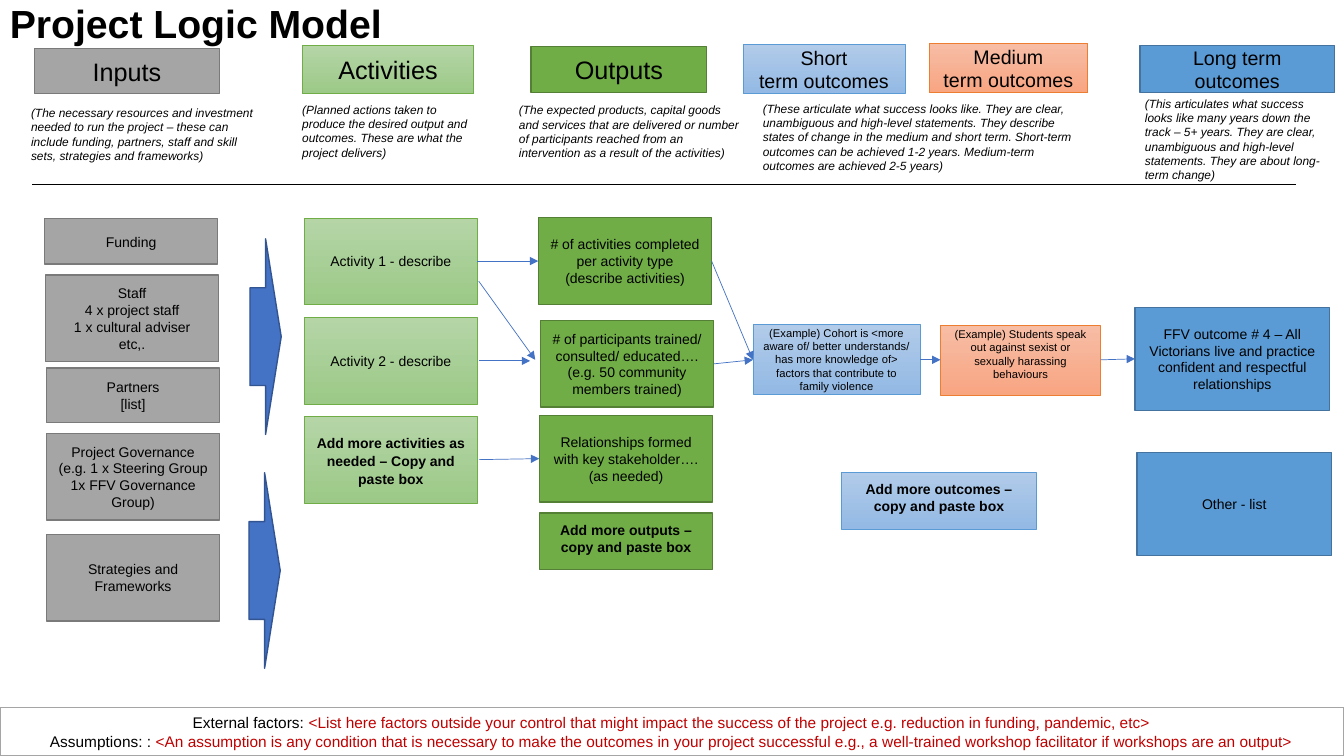
import pptx
import pptx.util
import pptx.dml.color
import pptx.enum.shapes
import pptx.enum.text
import pptx.oxml
import pptx.oxml.ns

COLUMNS, ROWS = 160, 90
SLIDE_WIDTH, SLIDE_HEIGHT = pptx.util.Inches(13.333), pptx.util.Inches(7.5)
COLORS = {
    "text": "000000", "hint": "C00000", "arrow": "4472C4", "arrow edge": "325491",
    "paper": "FFFFFF", "frame": "A5A5A5",
}
STYLES = {
    "input": (["A5A5A5"], "7A7A7A", 1),
    "activity": (["B5D5A7", "9CC987"], "70AD47", 0.5),
    "output": (["70AD47"], "538035", 1),
    "short": (["B1CBE9", "93B9E4"], "5B9BD5", 0.5),
    "medium": (["F7BDA5", "F8A582"], "ED7D31", 0.5),
    "long": (["5B9BD5"], "43739E", 1),
    "flow": ([COLORS["arrow"]], COLORS["arrow edge"], 1),
    "footer": ([COLORS["paper"]], COLORS["frame"], 1),
}
HEADINGS = [
    ("input", (4.08, 5.76, 22.08, 5.4), 18, ["Inputs"]),
    ("activity", (36, 5.4, 20.4, 5.76), 18, ["Activities"]),
    ("output", (63.24, 5.52, 20.88, 5.52), 18, ["Outputs"]),
    ("short", (88.44, 5.28, 19.32, 5.88), 14, ["Short", "term outcomes"]),
    ("medium", (110.64, 5.16, 18.84, 5.88), 14, ["Medium", "term outcomes"]),
    ("long", (135.72, 5.4, 23.16, 5.64), 14, ["Long term outcomes"]),
]
EXPLANATIONS = [
    ((2.52, 12.84, 29.16, 6.24), "(The necessary resources and investment needed to run the project – these can include funding, partners, staff and skill sets, strategies and frameworks)"),
    ((34.8, 11.4, 22.56, 8.4), "(Planned actions taken to produce the desired output and outcomes. These are what the project delivers)"),
    ((60.6, 10.56, 29.16, 10.2), "(The expected products, capital goods and services that are delivered or number of participants reached from an intervention as a result of the activities)"),
    ((89.64, 11.4, 40.44, 9.84), "(These articulate what success looks like. They are clear, unambiguous and high-level statements. They describe states of change in the medium and short term. Short-term outcomes can be achieved 1-2 years. Medium-term outcomes are achieved 2-5 years)"),
    ((135.12, 11.64, 23.64, 9.84), "(This articulates what success looks like many years down the track – 5+ years. They are clear, unambiguous and high-level statements. They are about long-term change)"),
]
BOX_WIDTH, BOX_HEIGHT = 20.64, 10.32
INPUTS = [
    (5.28, 26.04, 5.4, ["Funding"]),
    (5.4, 32.76, BOX_HEIGHT, ["Staff", "4 x project staff", "1 x cultural adviser", "etc,."]),
    (5.52, 43.8, 6.48, ["Partners", "[list]"]),
    (5.52, 51.6, BOX_HEIGHT, ["Project Governance", "(e.g. 1 x Steering Group", "1x FFV Governance Group)"]),
    (5.52, 63.6, BOX_HEIGHT, ["Strategies and Frameworks"]),
]
ACTIVITY_TOP, ACTIVITY_PITCH = 25.95, 11.82
ACTIVITIES = [
    (["Activity 1 - describe"], {}, 1),
    (["Activity 2 - describe"], {}, 1),
    (["Add more activities as needed – Copy and paste box"], {"bold": True}, 1.07),
]
OUTPUTS = [
    (64.08, 25.92, ["# of activities completed per activity type (describe activities)"]),
    (64.32, 38.16, ["# of participants trained/ consulted/ educated….", "(e.g. 50 community members trained)"]),
    (64.2, 49.44, ["Relationships formed with key stakeholder…. (as needed)"]),
]
OUTCOMES = [
    ("short", (89.64, 38.64, 19.92, 8.28), 8, "(Example) Cohort is <more aware of/ better understands/ has more knowledge of> factors that contribute to family violence", 0),
    ("medium", (111.96, 38.76, 19.08, 8.28), 8, "(Example) Students speak out against sexist or sexually harassing behaviours", 9.2),
    ("long", (135.12, 36.6, 23.16, 12.24), 10, "FFV outcome # 4 – All Victorians live and practice confident and respectful relationships", 0),
    ("long", (135.36, 53.88, 23.16, 12.24), 10, "Other - list", 0),
]
ADD_MORE = [
    ("short", (100.2, 56.28, 23.16, 6.72), "Add more outcomes – copy and paste box"),
    ("output", (64.2, 61.08, BOX_WIDTH, 6.72), "Add more outputs – copy and paste box"),
]
FLOW_ARROWS = [(29.76, 28.44, 3.72, 23.28), (29.64, 56.28, 3.72, 23.28)]
LINKS = [
    (56.8, 31.08, 64.08, 31.08), (57, 33.48, 63.72, 42.84),
    (57, 54.72, 64.2, 54.6), (57, 42.96, 63.12, 42.96),
    (84.72, 31.08, 89.64, 42.84), (84.96, 43.32, 89.64, 42.84),
    (109.56, 42.84, 111.96, 42.84), (131.04, 42.84, 135.12, 42.72),
]
FOOTER = [
    [("External factors: ", "text"),
     ("<List here factors outside your control that might impact the success of the project e.g. reduction in funding, pandemic, etc>", "hint")],
    [("Assumptions: : ", "text"),
     ("<An assumption is any condition that is necessary to make the outcomes in your project successful e.g., a well-trained workshop facilitator if workshops are an output>", "hint")],
]
CENTER = pptx.enum.text.PP_ALIGN.CENTER
LEFT = pptx.enum.text.PP_ALIGN.LEFT
MIDDLE = pptx.enum.text.MSO_ANCHOR.MIDDLE
TOP = pptx.enum.text.MSO_ANCHOR.TOP


def color(value):
    return pptx.dml.color.RGBColor.from_string(value)


def grid(*lengths):
    units = (SLIDE_WIDTH / COLUMNS, SLIDE_HEIGHT / ROWS)
    return [round(length * units[index % 2]) for index, length in enumerate(lengths)]


def write_text(shape, paragraphs, size, formats=None, align=CENTER, anchor=MIDDLE,
               line_spacing=1, lift=0):
    frame = shape.text_frame
    frame.word_wrap = True
    frame.vertical_anchor = anchor
    frame.margin_bottom = pptx.util.Pt(3.6 + lift)
    font_values = {"name": "Arial", "size": pptx.util.Pt(size), **(formats or {})}
    for index, content in enumerate(paragraphs):
        paragraph = frame.paragraphs[0] if index == 0 else frame.add_paragraph()
        paragraph.alignment = align
        paragraph.line_spacing = line_spacing
        pieces = [(content, "text")] if isinstance(content, str) else content
        for text, color_name in pieces:
            run = paragraph.add_run()
            run.text = text
            for name, value in font_values.items():
                setattr(run.font, name, value)
            run.font.color.rgb = color(COLORS[color_name])


def add_block(slide, style, place, kind=pptx.enum.shapes.MSO_SHAPE.RECTANGLE):
    fills, edge, weight = STYLES[style]
    shape = slide.shapes.add_shape(kind, *grid(*place))
    shape.shadow.inherit = False
    if len(fills) == 1:
        shape.fill.solid()
        shape.fill.fore_color.rgb = color(fills[0])
    else:
        shape.fill.gradient()
        shape.fill.gradient_angle = 270
        for stop, value in zip(shape.fill.gradient_stops, fills):
            stop.color.rgb = color(value)
    shape.line.color.rgb = color(edge)
    shape.line.width = pptx.util.Pt(weight)
    return shape


def add_box(slide, style, place, paragraphs, size=10, **options):
    write_text(add_block(slide, style, place), paragraphs, size, **options)


def add_note(slide, place, text, size, formats, anchor=MIDDLE, line_spacing=1):
    shape = slide.shapes.add_textbox(*grid(*place))
    write_text(shape, [text], size, formats, LEFT, anchor, line_spacing)


def add_line(slide, ends, color_name, weight, arrow=False):
    connector = slide.shapes.add_connector(
        pptx.enum.shapes.MSO_CONNECTOR.STRAIGHT, *grid(*ends))
    connector.line.color.rgb = color(COLORS[color_name])
    connector.line.width = pptx.util.Pt(weight)
    if arrow:
        head = pptx.oxml.parse_xml(
            f'<a:tailEnd {pptx.oxml.ns.nsdecls("a")} type="triangle"/>')
        connector.line._get_or_add_ln().append(head)
    effects = pptx.oxml.parse_xml(f'<a:effectLst {pptx.oxml.ns.nsdecls("a")}/>')
    connector._element.spPr.append(effects)


def main():
    presentation = pptx.Presentation()
    presentation.slide_width, presentation.slide_height = SLIDE_WIDTH, SLIDE_HEIGHT
    slide = presentation.slides.add_slide(presentation.slide_layouts[6])

    add_note(slide, (0, 0, COLUMNS, 6.48), "Project Logic Model", 28, {"bold": True}, TOP, 0.9)
    for place, text in EXPLANATIONS:
        add_note(slide, place, text, 8.5, {"italic": True})
    for style, place, size, paragraphs in HEADINGS:
        add_box(slide, style, place, paragraphs, size)
    add_line(slide, (3.84, 21.96, 154.32, 21.96), "text", 1)

    for left, top, height, paragraphs in INPUTS:
        add_box(slide, "input", (left, top, BOX_WIDTH, height), paragraphs)
    for index, (paragraphs, formats, spacing) in enumerate(ACTIVITIES):
        place = (36.2, ACTIVITY_TOP + index * ACTIVITY_PITCH, BOX_WIDTH, BOX_HEIGHT)
        add_box(slide, "activity", place, paragraphs, formats=formats, line_spacing=spacing)
    for left, top, paragraphs in OUTPUTS:
        add_box(slide, "output", (left, top, BOX_WIDTH, BOX_HEIGHT), paragraphs)
    for style, place, size, text, lift in OUTCOMES:
        add_box(slide, style, place, [text], size, lift=lift)
    for style, place, text in ADD_MORE:
        add_box(slide, style, place, [text], formats={"bold": True}, lift=4.6)

    for place in FLOW_ARROWS:
        add_block(slide, "flow", place, pptx.enum.shapes.MSO_SHAPE.RIGHT_ARROW)
    for ends in LINKS:
        add_line(slide, ends, "arrow", 0.5, arrow=True)
    add_box(slide, "footer", (0, 84.24, COLUMNS, 5.76), FOOTER, 11)
    presentation.save("out.pptx")


if __name__ == "__main__":
    main()
